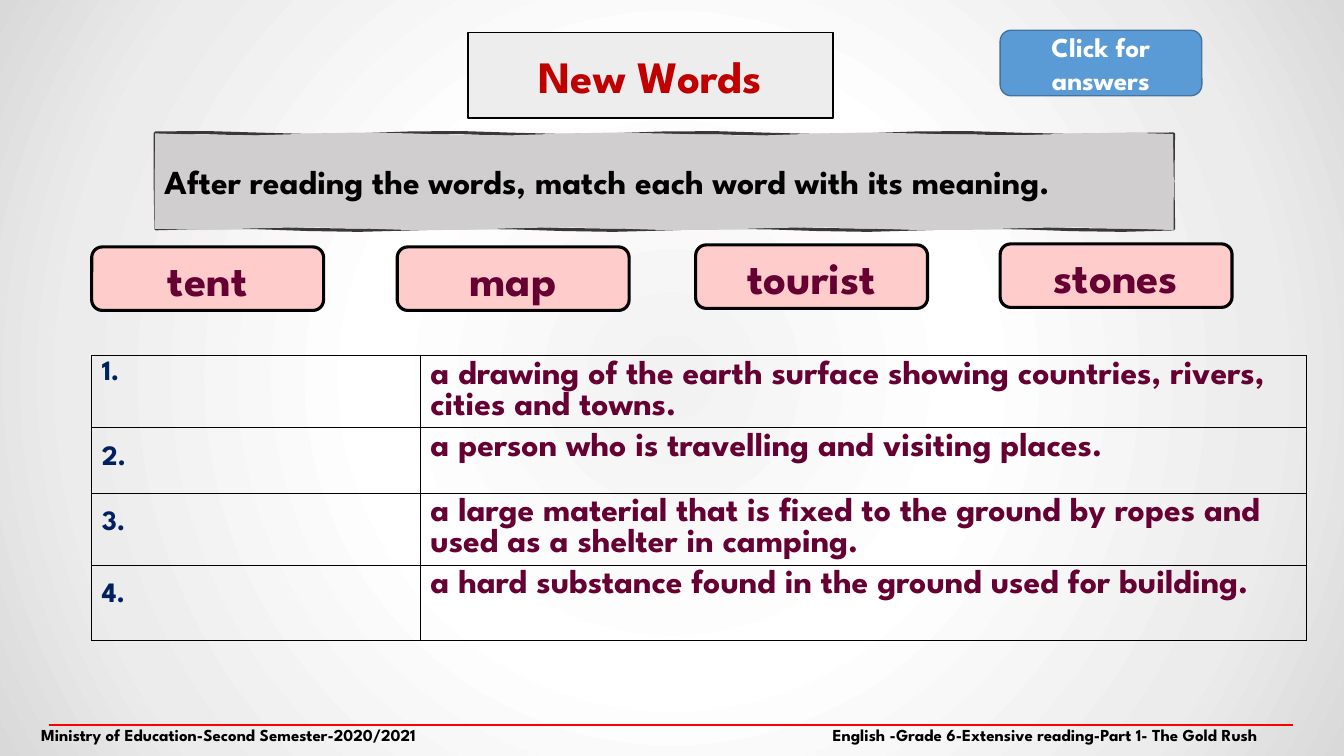
import copy
import math
import pptx
import pptx.util
import pptx.dml.color
import pptx.enum.shapes
import pptx.enum.text
import pptx.oxml
import pptx.oxml.ns

Inches = pptx.util.Inches
Pt = pptx.util.Pt
Kind = pptx.enum.shapes.MSO_SHAPE
Align = pptx.enum.text.PP_ALIGN
Anchor = pptx.enum.text.MSO_ANCHOR
NS = pptx.oxml.ns.nsdecls("a")
UNIT = 1000


def color(code):
    return pptx.dml.color.RGBColor.from_string(code)


def write(frame, text, size=24, ink="000000", align=Align.LEFT,
          anchor=Anchor.MIDDLE, wrap=True, space=None):
    frame.word_wrap = wrap
    frame.vertical_anchor = anchor
    para = frame.paragraphs[0]
    para.alignment = align
    if space:
        para.line_spacing = space
    run = para.add_run()
    run.text = text
    run.font.name = "League Spartan"
    run.font.size = Pt(size)
    run.font.bold = True
    run.font.color.rgb = color(ink)


def ripple(left, top, right, bottom, phase, wide=20, high=2):
    def wave(t):
        return 0.015 * math.sin(2.5 * t + phase)

    xs = [left + (right - left) * i / wide for i in range(wide)]
    ys = [top + (bottom - top) * i / high for i in range(high)]
    points = ([(x, top + wave(x)) for x in xs]
              + [(right + wave(y) / 2, y) for y in ys]
              + [(left + right - x, bottom + wave(x + 1)) for x in xs]
              + [(left + wave(y + 2) / 2, top + bottom - y) for y in ys])
    return [(x * UNIT, y * UNIT) for x, y in points]


class Board:
    def __init__(self, deck):
        self.slide = deck.slides.add_slide(deck.slide_layouts[5])
        self.shapes = self.slide.shapes
        self.edge = "000000"

    def back(self, stops):
        self.slide.background.fill.gradient()
        grad = self.slide.background._cSld.find(".//" + pptx.oxml.ns.qn("a:gradFill"))
        for child in list(grad):
            grad.remove(child)
        marks = "".join(f'<a:gs pos="{pos * 1000}"><a:srgbClr val="{code}"/></a:gs>'
                        for pos, code in stops)
        grad.append(pptx.oxml.parse_xml(f"<a:gsLst {NS}>{marks}</a:gsLst>"))
        grad.append(pptx.oxml.parse_xml(
            f'<a:path {NS} path="circle"><a:fillToRect l="50000" t="50000" '
            'r="50000" b="50000"/></a:path>'))

    def paint(self, shape, fill, line, width):
        shape.fill.solid()
        shape.fill.fore_color.rgb = color(fill)
        shape.line.color.rgb = color(line)
        shape.line.width = Pt(width)

    def title(self, text, box, fill, **style):
        head = self.shapes.title
        head.left, head.top, head.width, head.height = map(Inches, box)
        head._element.spPr.append(pptx.oxml.parse_xml(
            f'<a:prstGeom {NS} prst="frame"><a:avLst>'
            '<a:gd name="adj1" fmla="val 11000"/></a:avLst></a:prstGeom>'))
        self.paint(head, fill, self.edge, 1)
        head.text_frame.auto_size = pptx.enum.text.MSO_AUTO_SIZE.NONE
        write(head.text_frame, text, align=Align.CENTER, **style)

    def card(self, text, box, fill, line, width, **style):
        item = self.shapes.add_shape(Kind.ROUNDED_RECTANGLE, *map(Inches, box))
        item.shadow.inherit = False
        self.paint(item, fill, line, width)
        write(item.text_frame, text, align=Align.CENTER, **style)

    def sketch(self, text, edges, fill, line, width):
        outer, inner = ripple(*edges, 0), ripple(*edges, 2)
        pen = self.shapes.build_freeform(*outer[0], scale=Inches(1) / UNIT)
        pen.add_line_segments(outer[1:])
        pen.move_to(*inner[0])
        pen.add_line_segments(inner[1:])
        item = pen.convert_to_shape()
        item.shadow.inherit = False
        self.paint(item, fill, line, width)
        stroke = item._element.find(".//" + pptx.oxml.ns.qn("a:path"))
        area = copy.deepcopy(stroke)
        stroke.addnext(area)
        stroke.set("fill", "none")
        area.set("stroke", "0")
        half = len(stroke) // 2
        for step in list(stroke)[half:]:
            stroke.remove(step)
        for step in list(area)[:half]:
            area.remove(step)
        write(item.text_frame, text)

    def label(self, text, box, **style):
        item = self.shapes.add_textbox(*map(Inches, box))
        write(item.text_frame, text, anchor=Anchor.TOP, wrap=False, **style)

    def rule(self, x1, x2, y, ink, width):
        line = self.shapes.add_connector(
            pptx.enum.shapes.MSO_CONNECTOR.STRAIGHT, *map(Inches, (x1, y, x2, y)))
        line.line.color.rgb = color(ink)
        line.line.width = Pt(width)
        line._element.spPr.append(pptx.oxml.parse_xml(f"<a:effectLst {NS}/>"))

    def cell(self, cell, text, **style):
        write(cell.text_frame, text, anchor=Anchor.TOP, **style)
        props = cell._tc.get_or_add_tcPr()
        for side in ("lnL", "lnR", "lnT", "lnB"):
            props.append(pptx.oxml.parse_xml(
                f'<a:{side} {NS} w="12700"><a:solidFill><a:srgbClr val="{self.edge}"/>'
                f"</a:solidFill></a:{side}>"))
        cell.fill.background()

    def table(self, box, cols, rows, texts):
        grid = self.shapes.add_table(len(rows), len(cols), *map(Inches, box)).table
        grid.first_row = grid.horz_banding = False
        for col, width in zip(grid.columns, cols):
            col.width = Inches(width)
        for i, (height, text) in enumerate(zip(rows, texts)):
            grid.rows[i].height = Inches(height)
            self.cell(grid.cell(i, 0), f"{i + 1}.", size=20, ink="002060",
                      space=1.5 if i else None)
            self.cell(grid.cell(i, 1), text, ink="660033")


def main():
    deck = pptx.Presentation()
    deck.slide_width = Inches(13.33)
    deck.slide_height = Inches(7.5)
    board = Board(deck)
    board.back([(0, "F2F2F2"), (39, "FFFFFF"), (78, "ECECEC"), (100, "D9D9D9")])

    board.title("New Words", (4.64, 0.32, 3.62, 0.85), "EDEDED", size=32, ink="C00000")
    board.sketch("After reading the words, match each word with its meaning.",
                 (1.54, 1.33, 11.64, 2.27), "D0CECE", "3B3838", 2.25)

    words = [("tent", 0.91, 2.45), ("map", 3.94, 2.45),
             ("tourist", 6.9, 2.43), ("stones", 9.92, 2.42)]
    for word, left, top in words:
        board.card(word, (left, top, 2.3, 0.63), "FFCCCC", board.edge, 2.25,
                   size=32, ink="660033")

    board.table((0.91, 3.53, 12.05, 2.66), (3.26, 8.79), (0.59, 0.65, 0.67, 0.75), [
        "a drawing of the earth surface showing countries, rivers, cities and towns.",
        "a person who is travelling and visiting places.",
        "a large material that is fixed to the ground by ropes and used as a shelter in camping.",
        "a hard substance found in the ground used for building."])

    board.card("Click for answers", (9.92, 0.3, 2, 0.65), "5B9BD5", "43739E", 1,
               size=19.5, ink="FFFFFF")

    board.rule(0.49, 12.82, 7.19, "FF0000", 1.5)
    board.label("English -Grade 6-Extensive reading-Part 1- The Gold Rush",
                (8.16, 7.14, 4.84, 0.3), size=12)
    board.label("Ministry of Education-Second Semester-2020/2021",
                (0.31, 7.14, 4.27, 0.3), size=12)
    deck.save("out.pptx")


if __name__ == "__main__":
    main()
